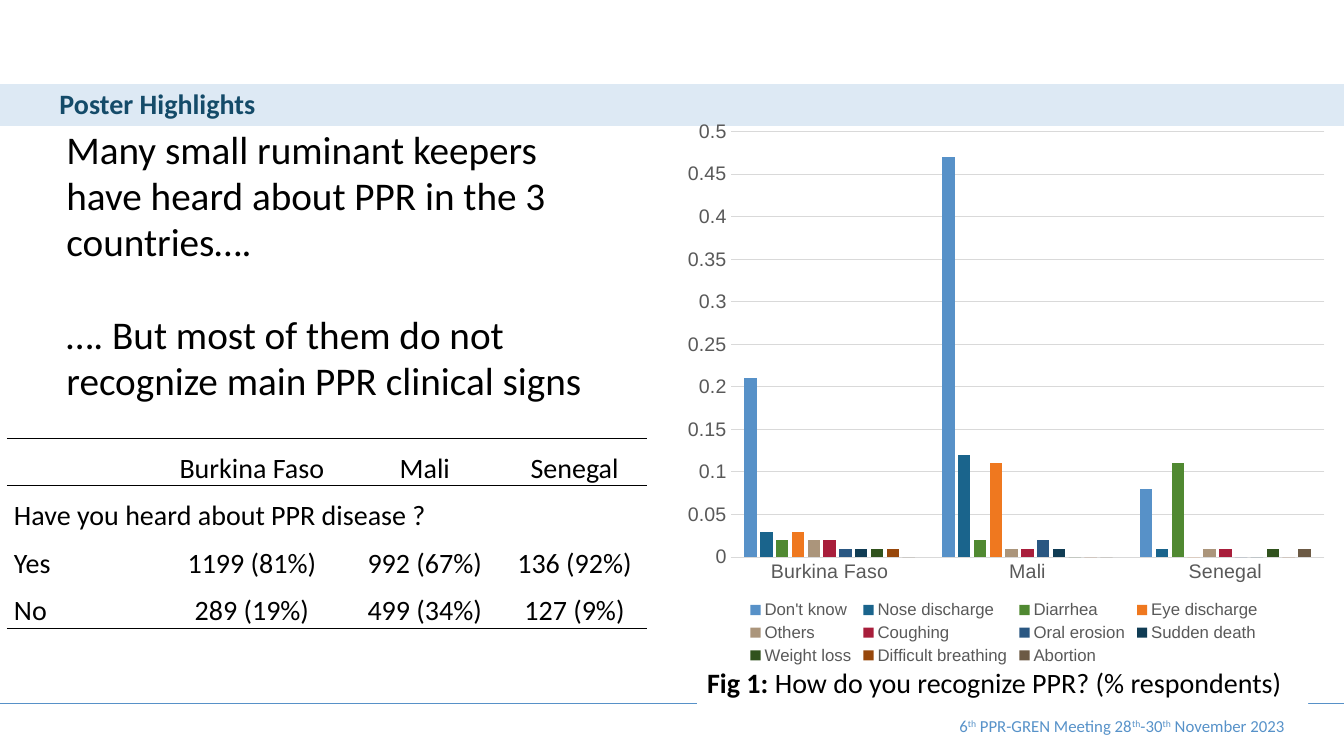
import pptx
import pptx.chart.data
import pptx.dml.color
import pptx.enum.chart
import pptx.enum.shapes
import pptx.enum.text
import pptx.oxml
import pptx.oxml.ns
import pptx.util
import lxml.etree

Pt = pptx.util.Pt
RGBColor = pptx.dml.color.RGBColor
Align = pptx.enum.text.PP_ALIGN
Anchor = pptx.enum.text.MSO_ANCHOR
qn = pptx.oxml.ns.qn

BLACK = RGBColor(0x00, 0x00, 0x00)
WHITE = RGBColor(0xFF, 0xFF, 0xFF)
BAND_BLUE = RGBColor(0xDD, 0xE9, 0xF4)
HEADING_BLUE = RGBColor(0x14, 0x4B, 0x69)
FOOTER_BLUE = RGBColor(0x57, 0x92, 0xC9)
RULE_BLUE = RGBColor(0x57, 0x91, 0xC8)
AXIS_GREY = RGBColor(0x59, 0x59, 0x59)
GRID_GREY = RGBColor(0xD9, 0xD9, 0xD9)


def write_text(frame, paragraphs, size=20, color=BLACK, bold=False, align=Align.LEFT,
               spacing=1.0, gap=0, anchor=Anchor.TOP, margins=(7.2, 3.6, 7.2, 3.6)):
    """Fill a frame; each paragraph is a list of (text, style), style "", "bold" or "super"."""
    frame.word_wrap = True
    frame.auto_size = pptx.enum.text.MSO_AUTO_SIZE.NONE
    frame.vertical_anchor = anchor
    (frame.margin_left, frame.margin_top,
     frame.margin_right, frame.margin_bottom) = [Pt(margin) for margin in margins]
    for index, pieces in enumerate(paragraphs):
        para = frame.add_paragraph() if index else frame.paragraphs[0]
        para.alignment = align
        para.line_spacing = spacing
        para.space_before = Pt(gap if index else 0)
        for text, style in pieces:
            span = para.add_run()
            span.text = text
            span.font.name = "Calibri"
            span.font.size = Pt(size)
            span.font.bold = bold or style == "bold"
            span.font.color.rgb = color
            if style == "super":
                span._r.get_or_add_rPr().set("baseline", "30000")


def set_layout(element, position, target=None):
    """Place a chart part by fractions (x, y, width, height) of the chart area."""
    layout = element.find(qn("c:layout"))
    if layout is None:
        layout = lxml.etree.Element(qn("c:layout"))
        if target:
            element.insert(0, layout)
        else:
            element.find(qn("c:legendPos")).addnext(layout)
    for child in list(layout):
        layout.remove(child)
    manual = lxml.etree.SubElement(layout, qn("c:manualLayout"))
    settings = [("layoutTarget", target)] if target else []
    settings += [("xMode", "edge"), ("yMode", "edge")]
    settings += zip("xywh", position)
    for name, value in settings:
        lxml.etree.SubElement(manual, qn("c:" + name)).set("val", str(value))


deck = pptx.Presentation()
deck.slide_width, deck.slide_height = Pt(960), Pt(540)
page = deck.slides.add_slide(deck.slide_layouts[5])

# Heading band
heading = page.shapes.title
heading.left, heading.top, heading.width, heading.height = Pt(0), Pt(60), Pt(960), Pt(30)
heading.fill.solid()
heading.fill.fore_color.rgb = BAND_BLUE
write_text(heading.text_frame, [[("Poster Highlights", "")]], color=HEADING_BLUE, bold=True,
           spacing=0.9, anchor=Anchor.MIDDLE, margins=(42.5, 3.6, 7.2, 3.6))

# Footer
rule = page.shapes.add_connector(pptx.enum.shapes.MSO_CONNECTOR.STRAIGHT,
                                 Pt(0), Pt(502.5), Pt(960), Pt(502.5))
rule.line.color.rgb = RULE_BLUE
rule.line.width = Pt(0.5)
lxml.etree.SubElement(rule._element.spPr, qn("a:effectLst"))

footer = page.shapes.add_textbox(Pt(612), Pt(507), Pt(348), Pt(25))
write_text(footer.text_frame,
           [[("6", ""), ("th", "super"), (" PPR-GREN Meeting 28", ""), ("th", "super"),
             ("-30", ""), ("th", "super"), (" November 2023", "")]],
           size=12, color=FOOTER_BLUE, align=Align.RIGHT, spacing=0.9,
           anchor=Anchor.MIDDLE, margins=(42.5, 3.6, 42.5, 3.6))

# Key message
message = page.shapes.add_textbox(Pt(5), Pt(91), Pt(457), Pt(203))
write_text(message.text_frame,
           [[("Many small ruminant keepers have heard about PPR in the 3 countries….", "")],
            [("…. But most of them do not recognize main PPR clinical signs", "")]],
           size=28, spacing=0.98, gap=33.5, margins=(42.5, 0, 28, 3.6))

# Awareness table
ROWS = [
    ["", "Burkina Faso", "Mali", "Senegal"],
    ["Have you heard about PPR disease ?", "", "", ""],
    ["Yes", "1199 (81%)", "992 (67%)", "136 (92%)"],
    ["No", "289 (19%)", "499 (34%)", "127 (9%)"],
]
RULED_SIDES = {0: ("T", "B"), 1: ("T",), 3: ("B",)}
table = page.shapes.add_table(4, 4, Pt(5), Pt(313), Pt(457), Pt(136)).table
table.first_row = table.horz_banding = False
for column, width in zip(table.columns, (107, 136, 111, 103)):
    column.width = Pt(width)
table.cell(1, 0).merge(table.cell(1, 3))
for row_index, row in enumerate(ROWS):
    table.rows[row_index].height = Pt(34)
    for column_index, text in enumerate(row):
        cell = table.cell(row_index, column_index)
        cell.fill.background()
        cell.vertical_anchor = Anchor.BOTTOM
        cell.margin_left = cell.margin_right = Pt(5)
        cell.margin_top = cell.margin_bottom = Pt(0)
        para = cell.text_frame.paragraphs[0]
        para.alignment = Align.CENTER if column_index else Align.LEFT
        para.line_spacing = 1.07
        para.font.size = Pt(20)
        para.font.name = "Calibri"
        para.font.color.rgb = BLACK
        if text:
            para.add_run().text = text
        properties = cell._tc.get_or_add_tcPr()
        for position, side in enumerate("LRTB"):
            border = lxml.etree.Element(qn("a:ln" + side), w=str(Pt(1)))
            if side in RULED_SIDES.get(row_index, ()):
                fill = lxml.etree.SubElement(border, qn("a:solidFill"))
                lxml.etree.SubElement(fill, qn("a:srgbClr"), val=str(BLACK))
            else:
                lxml.etree.SubElement(border, qn("a:noFill"))
            properties.insert(position, border)

# Figure caption
caption = page.shapes.add_shape(pptx.enum.shapes.MSO_SHAPE.RECTANGLE,
                                Pt(498), Pt(471.5), Pt(436.5), Pt(38))
caption.shadow.inherit = False
caption.fill.solid()
caption.fill.fore_color.rgb = WHITE
caption.line.fill.background()
write_text(caption.text_frame,
           [[("Fig 1: ", "bold"), ("How do you recognize PPR? (% respondents)", "")]],
           align=Align.JUSTIFY)

# Clinical signs chart
SIGNS = [
    ("Don't know", (0.21, 0.47, 0.08), RULE_BLUE),
    ("Nose discharge", (0.03, 0.12, 0.01), RGBColor(0x1A, 0x64, 0x8C)),
    ("Diarrhea", (0.02, 0.02, 0.11), RGBColor(0x50, 0x89, 0x31)),
    ("Eye discharge", (0.03, 0.11, 0), RGBColor(0xEF, 0x78, 0x1F)),
    ("Others", (0.02, 0.01, 0.01), RGBColor(0xAB, 0x95, 0x7B)),
    ("Coughing", (0.02, 0.01, 0.01), RGBColor(0xA8, 0x1E, 0x3B)),
    ("Oral erosion", (0.01, 0.02, 0), RGBColor(0x2A, 0x57, 0x82)),
    ("Sudden death", (0.01, 0.01, 0), RGBColor(0x10, 0x3C, 0x54)),
    ("Weight loss", (0.01, 0, 0.01), RGBColor(0x30, 0x52, 0x1D)),
    ("Difficult breathing", (0.01, 0, 0), RGBColor(0x97, 0x47, 0x0B)),
    ("Abortion", (0, 0, 0.01), RGBColor(0x6C, 0x5A, 0x45)),
]
chart_data = pptx.chart.data.CategoryChartData()
chart_data.categories = ROWS[0][1:]
for name, values, color in SIGNS:
    chart_data.add_series(name, values)
chart = page.shapes.add_chart(pptx.enum.chart.XL_CHART_TYPE.COLUMN_CLUSTERED,
                              Pt(479), Pt(78), Pt(476.5), Pt(400), chart_data).chart
chart.has_title = False
chart.font.name = "Arial"
chart.font.size = Pt(14)
chart.font.color.rgb = AXIS_GREY

plot = chart.plots[0]
plot.vary_by_categories = False
plot.gap_width, plot.overlap = 219, -27
for series, (name, values, color) in zip(plot.series, SIGNS):
    series.format.fill.solid()
    series.format.fill.fore_color.rgb = color

value_axis = chart.value_axis
value_axis.minimum_scale, value_axis.maximum_scale, value_axis.major_unit = 0, 0.5, 0.05
value_axis.format.line.fill.background()
for axis in (chart.category_axis, value_axis):
    axis.major_tick_mark = axis.minor_tick_mark = pptx.enum.chart.XL_TICK_MARK.NONE
for line in (chart.category_axis.format.line, value_axis.major_gridlines.format.line):
    line.color.rgb = GRID_GREY
    line.width = Pt(0.75)

chart.has_legend = True
legend = chart.legend
legend.position = pptx.enum.chart.XL_LEGEND_POSITION.BOTTOM
legend.include_in_layout = False
legend.font.name = "Arial"
legend.font.size = Pt(12)
legend.font.color.rgb = AXIS_GREY
set_layout(chart._chartSpace.chart.plotArea, (0.09, 0.04, 0.89, 0.76), "inner")
set_layout(legend._element, (0.11, 0.87, 0.78, 0.13))

deck.save("out.pptx")
